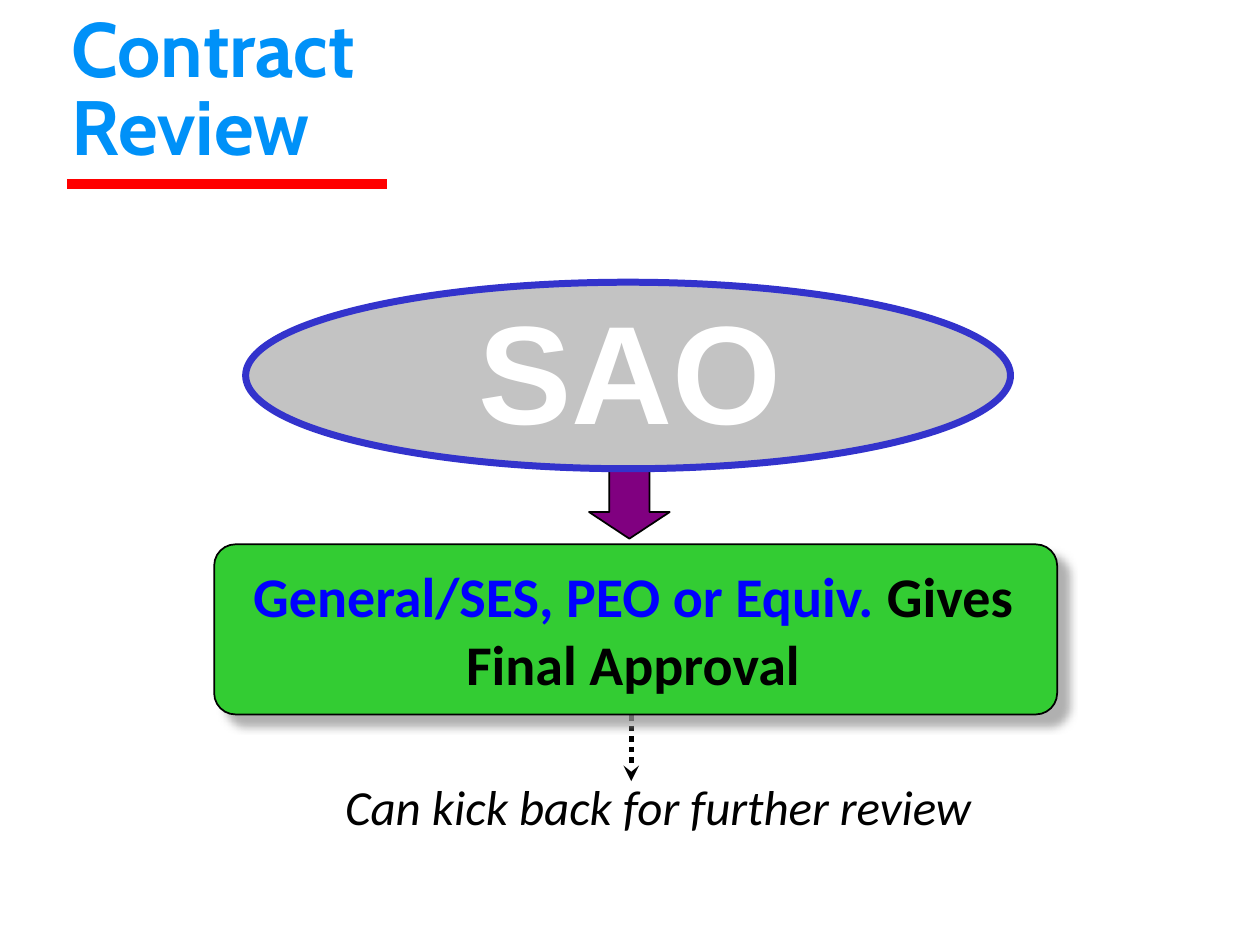
from typing import NamedTuple, Optional

from lxml.etree import SubElement
from pptx import Presentation
from pptx.dml.color import RGBColor
from pptx.enum.dml import MSO_LINE
from pptx.enum.shapes import MSO_CONNECTOR, MSO_SHAPE
from pptx.enum.text import MSO_ANCHOR, PP_ALIGN
from pptx.oxml.ns import qn
from pptx.util import Inches, Pt

BLACK = RGBColor(0x00, 0x00, 0x00)
WHITE = RGBColor(0xFF, 0xFF, 0xFF)
GRAY = RGBColor(0xC3, 0xC3, 0xC3)
SHADOW_GRAY = RGBColor(0x96, 0x96, 0x96)
GREEN = RGBColor(0x33, 0xCC, 0x33)
PURPLE = RGBColor(0x80, 0x00, 0x80)
INDIGO = RGBColor(0x33, 0x33, 0xCC)
BLUE = RGBColor(0x00, 0x00, 0xFF)
SKY = RGBColor(0x00, 0x91, 0xF8)
RED = RGBColor(0xFF, 0x00, 0x00)

WIDTH, HEIGHT = Inches(10), Inches(7.5)
COL, ROW = WIDTH / 100, HEIGHT / 75


class Box(NamedTuple):
    """Left, top, width and height in grid columns and rows."""
    x: float
    y: float
    w: float
    h: float

    def emu(self) -> tuple:
        return (round(self.x * COL), round(self.y * ROW),
                round(self.w * COL), round(self.h * ROW))


class Figure(NamedTuple):
    kind: MSO_SHAPE
    box: Box
    fill: RGBColor
    line: RGBColor
    weight: float
    adjustments: tuple = ()
    rotation: float = 0


class Rule(NamedTuple):
    start: tuple
    end: tuple
    color: RGBColor
    weight: float
    dash: Optional[MSO_LINE] = None
    head: Optional[str] = None


class Style(NamedTuple):
    font: str
    size: float
    color: RGBColor
    bold: bool = False
    italic: bool = False
    align: PP_ALIGN = PP_ALIGN.LEFT
    anchor: MSO_ANCHOR = MSO_ANCHOR.TOP
    spacing: float = 1.0


KICK_BACK_ARROW = Rule((50.1, 55.1), (50.1, 62), BLACK, 3, MSO_LINE.ROUND_DOT, "stealth")
TITLE_RULE = Rule((5.3, 14.6), (30.7, 14.6), RED, 6)
DOWN_ARROW = Figure(MSO_SHAPE.RIGHT_ARROW, Box(45.7, 35.3, 8.5, 6.4), PURPLE, BLACK, 1,
                    (0.5, 0.33), 90)
APPROVAL = Figure(MSO_SHAPE.ROUNDED_RECTANGLE, Box(17, 43.2, 66.9, 13.5), GREEN, BLACK, 1,
                  (0.125,))
OVAL = Figure(MSO_SHAPE.OVAL, Box(19.5, 22.4, 60.7, 14.8), GRAY, INDIGO, 4)

HEADING = Style("Cabin", 44, SKY, bold=True, anchor=MSO_ANCHOR.BOTTOM, spacing=0.85)
OVAL_TITLE = Style("Arial", 80, WHITE, bold=True, align=PP_ALIGN.CENTER,
                   anchor=MSO_ANCHOR.BOTTOM, spacing=0.8)
DECISION = Style("Calibri", 32, BLACK, bold=True, align=PP_ALIGN.CENTER)
REMARK = Style("Calibri", 28, BLACK, italic=True)


def shadow_list(color: RGBColor, alpha: int, blur: float, distance: float):
    """Return an effect list with an outer shadow towards the lower right."""
    effects = OxmlEffects()
    shadow = SubElement(effects, qn("a:outerShdw"), blurRad=str(Pt(blur)),
                        dist=str(Pt(distance)), dir="2700000", algn="ctr", rotWithShape="0")
    clr = SubElement(shadow, qn("a:srgbClr"), val=str(color))
    SubElement(clr, qn("a:alpha"), val=str(alpha * 1000))
    return effects


def OxmlEffects():
    from pptx.oxml import parse_xml
    from pptx.oxml.ns import nsdecls
    return parse_xml(f"<a:effectLst {nsdecls('a')}/>")


def add_figure(shapes, fig: Figure):
    sp = shapes.add_shape(fig.kind, *fig.box.emu())
    sp.shadow.inherit = False
    sp.rotation = fig.rotation
    for i, value in enumerate(fig.adjustments):
        sp.adjustments[i] = value
    sp.fill.solid()
    sp.fill.fore_color.rgb = fig.fill
    sp.line.color.rgb = fig.line
    sp.line.width = Pt(fig.weight)
    return sp


def add_rule(shapes, rule: Rule) -> None:
    ends = [round(v * unit) for point in (rule.start, rule.end)
            for v, unit in zip(point, (COL, ROW))]
    cx = shapes.add_connector(MSO_CONNECTOR.STRAIGHT, *ends)
    cx.line.color.rgb = rule.color
    cx.line.width = Pt(rule.weight)
    if rule.dash:
        cx.line.dash_style = rule.dash
    if rule.head:
        SubElement(cx.line._get_or_add_ln(), qn("a:tailEnd"), type=rule.head)
    cx._element.spPr.append(OxmlEffects())


def write(sp, style: Style, *parts: tuple) -> None:
    """Fill a text shape with (text, colour) runs; None keeps the style's colour."""
    tf = sp.text_frame
    tf.word_wrap = True
    tf.vertical_anchor = style.anchor
    p = tf.paragraphs[0]
    p.alignment = style.align
    p.line_spacing = style.spacing
    p.space_before = Pt(0)
    f = p.font
    f.name, f.size, f.bold, f.italic = style.font, Pt(style.size), style.bold, style.italic
    f.color.rgb = style.color
    for i, line in enumerate(parts):
        text, color = line
        for j, piece in enumerate(text.split("\n")):
            if j:
                p.add_line_break()
            r = p.add_run()
            r.text = piece
            if color is not None:
                r.font.color.rgb = color


def add_text(shapes, box: Box, style: Style, *parts: tuple) -> None:
    write(shapes.add_textbox(*box.emu()), style, *parts)


def main() -> None:
    prs = Presentation()
    prs.slide_width, prs.slide_height = WIDTH, HEIGHT
    s = prs.slides.add_slide(prs.slide_layouts[5])
    shapes, title = s.shapes, s.shapes.title

    add_rule(shapes, KICK_BACK_ARROW)
    add_figure(shapes, DOWN_ARROW)

    group = shapes.add_group_shape()
    approval = add_figure(group.shapes, APPROVAL)
    approval._element.spPr.replace(approval._element.spPr.find(qn("a:effectLst")),
                                   shadow_list(SHADOW_GRAY, 75, 5, 8.5))
    add_text(group.shapes, Box(14.9, 44.1, 70.7, 11.8), DECISION,
             ("General/SES, PEO or Equiv. ", BLUE), ("Gives Final Approval", None))

    add_text(shapes, Box(26.4, 61.1, 53.9, 5.7), REMARK,
             ("Can kick back for further review", None))

    add_figure(shapes, OVAL)
    title.left, title.top, title.width, title.height = Box(18.4, 25.2, 63.2, 11.1).emu()
    write(title, OVAL_TITLE, ("SAO", WHITE))
    run_props = title.text_frame.paragraphs[0].runs[0].font._element
    run_props.find(qn("a:solidFill")).addnext(shadow_list(INDIGO, 100, 4, 4))
    shapes._spTree.append(title._element)  # in front of the oval

    add_rule(shapes, TITLE_RULE)
    add_text(shapes, Box(4.7, 2, 85, 12.1), HEADING, ("Contract \nReview", None))
    prs.save("out.pptx")


if __name__ == "__main__":
    main()
